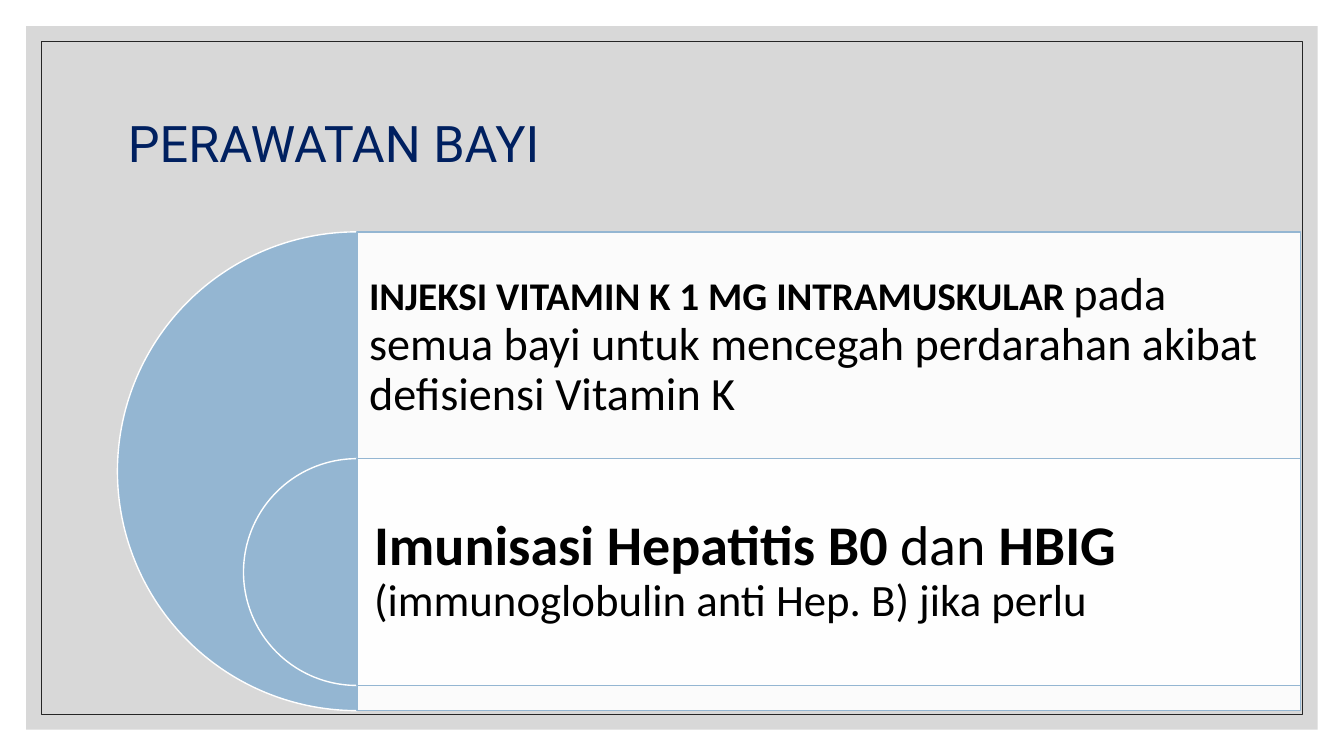
from lxml.etree import SubElement
from pptx import Presentation
from pptx.dml.color import RGBColor
from pptx.enum.shapes import MSO_SHAPE
from pptx.enum.text import MSO_ANCHOR
from pptx.oxml.ns import qn
from pptx.util import Inches, Pt

WHITE = RGBColor(0xFF, 0xFF, 0xFF)
BLACK = RGBColor(0, 0, 0)
NAVY = RGBColor(0x00, 0x20, 0x60)
BLUE = RGBColor(0x94, 0xB6, 0xD2)
GREY = RGBColor(0xBF, 0xBF, 0xBF)
CHARCOAL = RGBColor(0x26, 0x26, 0x26)

WIDTH, HEIGHT = 13.33, 7.5
LEFT, TOP = 1.17, 2.3
DISC = 4.75
ROW = 2.25
PANEL_LEFT, PANEL_WIDTH = 3.54, 9.36

deck = Presentation()
deck.slide_width, deck.slide_height = Inches(WIDTH), Inches(HEIGHT)
slide = deck.slides.add_slide(deck.slide_layouts[6])


def add_block(kind, box, fill=None, opacity=100, line=None, weight=1):
    block = slide.shapes.add_shape(kind, *map(Inches, box))
    block.shadow.inherit = False
    if fill is None:
        block.fill.background()
    else:
        block.fill.solid()
        block.fill.fore_color.rgb = fill
        if opacity < 100:
            color = block.fill._xPr.find(qn("a:solidFill"))[0]
            SubElement(color, qn("a:alpha")).set("val", str(opacity * 1000))
    if line is None:
        block.line.fill.background()
    else:
        block.line.color.rgb = line
        block.line.width = Pt(weight)
    return block


def add_text(box, parts, font="Calibri", color=BLACK, inset=0.1, inset_y=None):
    frame = slide.shapes.add_textbox(*map(Inches, box)).text_frame
    frame.word_wrap = True
    frame.vertical_anchor = MSO_ANCHOR.MIDDLE
    frame.margin_left = frame.margin_right = Inches(inset)
    frame.margin_top = frame.margin_bottom = Inches(inset if inset_y is None else inset_y)
    paragraph = frame.paragraphs[0]
    paragraph.line_spacing = 0.9
    for words, size, bold in parts:
        run = paragraph.add_run()
        run.text = words
        run.font.name, run.font.size, run.font.bold = font, Pt(size), bold
        run.font.color.rgb = color


for margin, look in (
    (0.26, {"fill": GREY, "opacity": 60}),
    (0.41, {"line": CHARCOAL, "weight": 0.5}),
):
    frame_box = (margin, margin, WIDTH - 2 * margin, HEIGHT - 2 * margin)
    add_block(MSO_SHAPE.RECTANGLE, frame_box, **look)

add_text((LEFT, 0.7, 11, 1.5), [("PERAWATAN BAYI", 36, False)],
         font="Roboto", color=NAVY, inset_y=0.05)

vitamin_k = [
    ("INJEKSI VITAMIN K 1 MG INTRAMUSKULAR ", 28, True),
    ("pada semua bayi untuk mencegah perdarahan akibat defisiensi Vitamin K", 33, False),
]
immunisation = [
    ("Imunisasi Hepatitis B0 ", 40, True),
    ("dan ", 40, False),
    ("HBIG ", 40, True),
    ("(immunoglobulin anti Hep. B) jika perlu", 32, False),
]
treatments = ((vitamin_k, DISC, 0.12), (immunisation, ROW, 0.17))

for row, (parts, size, inset) in enumerate(treatments):
    top = TOP + row * ROW
    half_disc = add_block(MSO_SHAPE.PIE, (PANEL_LEFT - size / 2, top, size, size),
                          fill=BLUE, line=WHITE)
    half_disc.adjustments[0], half_disc.adjustments[1] = 54, 162
    add_block(MSO_SHAPE.RECTANGLE, (PANEL_LEFT, top, PANEL_WIDTH, size),
              fill=WHITE, opacity=90, line=BLUE)
    add_text((PANEL_LEFT, top, PANEL_WIDTH, ROW), parts, inset=inset)

deck.save("out.pptx")
